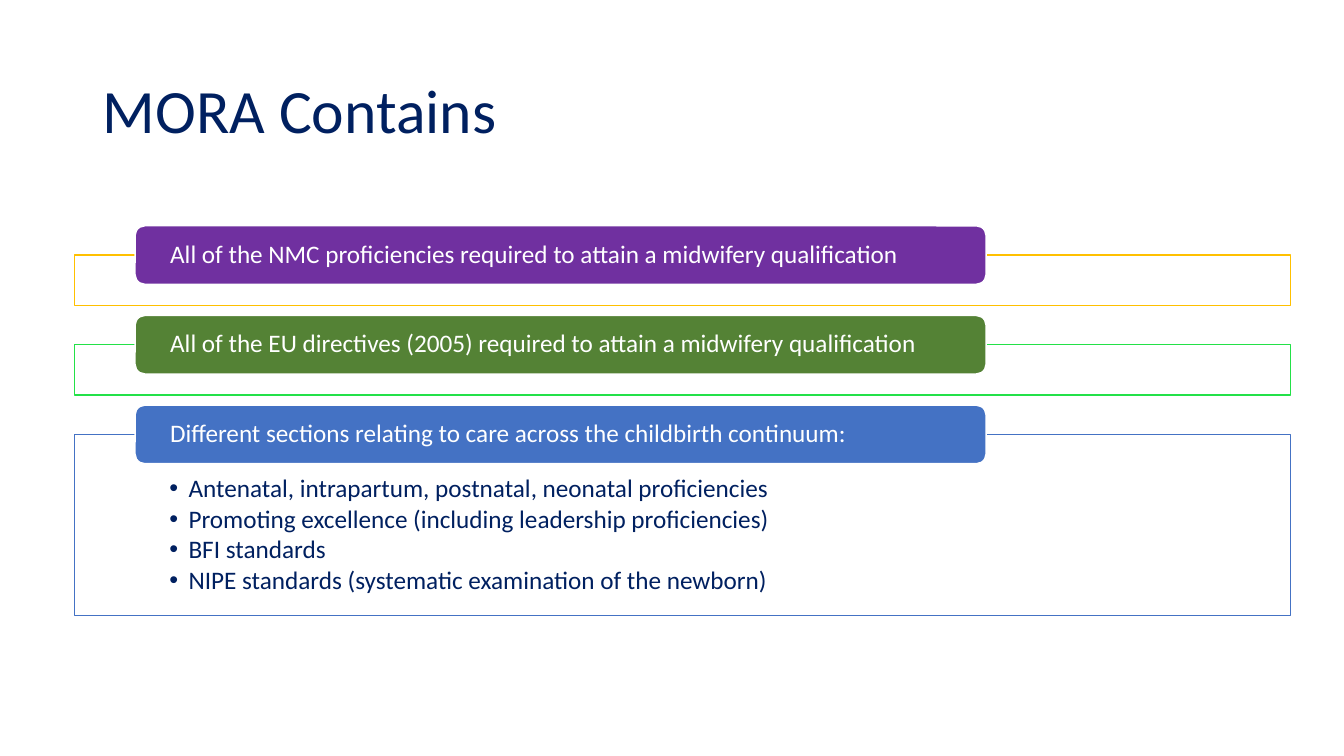
from lxml import etree
from pptx import Presentation
from pptx.dml.color import RGBColor
from pptx.enum.shapes import MSO_SHAPE
from pptx.enum.text import MSO_ANCHOR, PP_ALIGN
from pptx.oxml.ns import qn
from pptx.util import Pt

RECT, ROUNDED = MSO_SHAPE.RECTANGLE, MSO_SHAPE.ROUNDED_RECTANGLE
TOP, MIDDLE = MSO_ANCHOR.TOP, MSO_ANCHOR.MIDDLE
LEFT = PP_ALIGN.LEFT
FONT, NAVY, WHITE = "Calibri", "002060", "FFFFFF"

SECTIONS = [
    ("All of the NMC proficiencies required to attain a midwifery qualification",
     "7030A0", "FFC000", []),
    ("All of the EU directives (2005) required to attain a midwifery qualification",
     "548235", "23E148", []),
    ("Different sections relating to care across the childbirth continuum:",
     "4472C4", "4472C4",
     ["Antenatal, intrapartum, postnatal, neonatal proficiencies",
      "Promoting excellence (including leadership proficiencies)",
      "BFI standards",
      "NIPE standards (systematic examination of the newborn)"]),
]


def px(n):
    return n * 9144


def rgb(value):
    return RGBColor.from_string(value)


def write(sp, lines, size, color, anchor, insets, after=0):
    tf = sp.text_frame
    tf.word_wrap = True
    tf.vertical_anchor = anchor
    tf.margin_left, tf.margin_top, tf.margin_right, tf.margin_bottom = map(px, insets)
    tf.text = "\n".join(lines)
    for p in tf.paragraphs:
        p.alignment = LEFT
        p.line_spacing = 0.9
        p.space_after = Pt(after)
        for r in p.runs:
            r.font.name = FONT
            r.font.size = Pt(size)
            r.font.color.rgb = rgb(color)


def add_bullets(sp):
    for p in sp.text_frame.paragraphs:
        pPr = p._p.get_or_add_pPr()
        pPr.set("marL", str(px(19)))
        pPr.set("indent", str(-px(19)))
        etree.SubElement(pPr, qn("a:buFont")).set("typeface", "Arial")
        etree.SubElement(pPr, qn("a:buChar")).set("char", "•")


def add_box(s, kind, x, y, w, h, fill, line):
    sp = s.shapes.add_shape(kind, px(x), px(y), px(w), px(h))
    sp.shadow.inherit = False
    sp.fill.solid()
    sp.fill.fore_color.rgb = rgb(fill)
    sp.line.color.rgb = rgb(line)
    sp.line.width = Pt(1)
    return sp


def add_title(s, text):
    sp = s.shapes.add_textbox(px(92), px(40), px(1150), px(145))
    write(sp, [text], 44, NAVY, MIDDLE, (10, 5, 10, 5))


def add_section(s, y, heading, fill, line, bullets):
    h = 180 if bullets else 50
    frame = add_box(s, RECT, 74, y, 1206, h, WHITE, line)
    if bullets:
        write(frame, bullets, 18, NAVY, TOP, (94, 41, 94, 14), 2.4)
        add_bullets(frame)
    label = add_box(s, ROUNDED, 134, y - 29, 844, 58, fill, WHITE)
    write(label, [heading], 18, WHITE, MIDDLE, (32, 0, 32, 0))


def main():
    prs = Presentation()
    prs.slide_width, prs.slide_height = px(1333), px(750)
    s = prs.slides.add_slide(prs.slide_layouts[6])
    add_title(s, "MORA Contains")
    for i, section in enumerate(SECTIONS):
        add_section(s, 253 + 89 * i, *section)
    prs.save("out.pptx")


if __name__ == "__main__":
    main()
